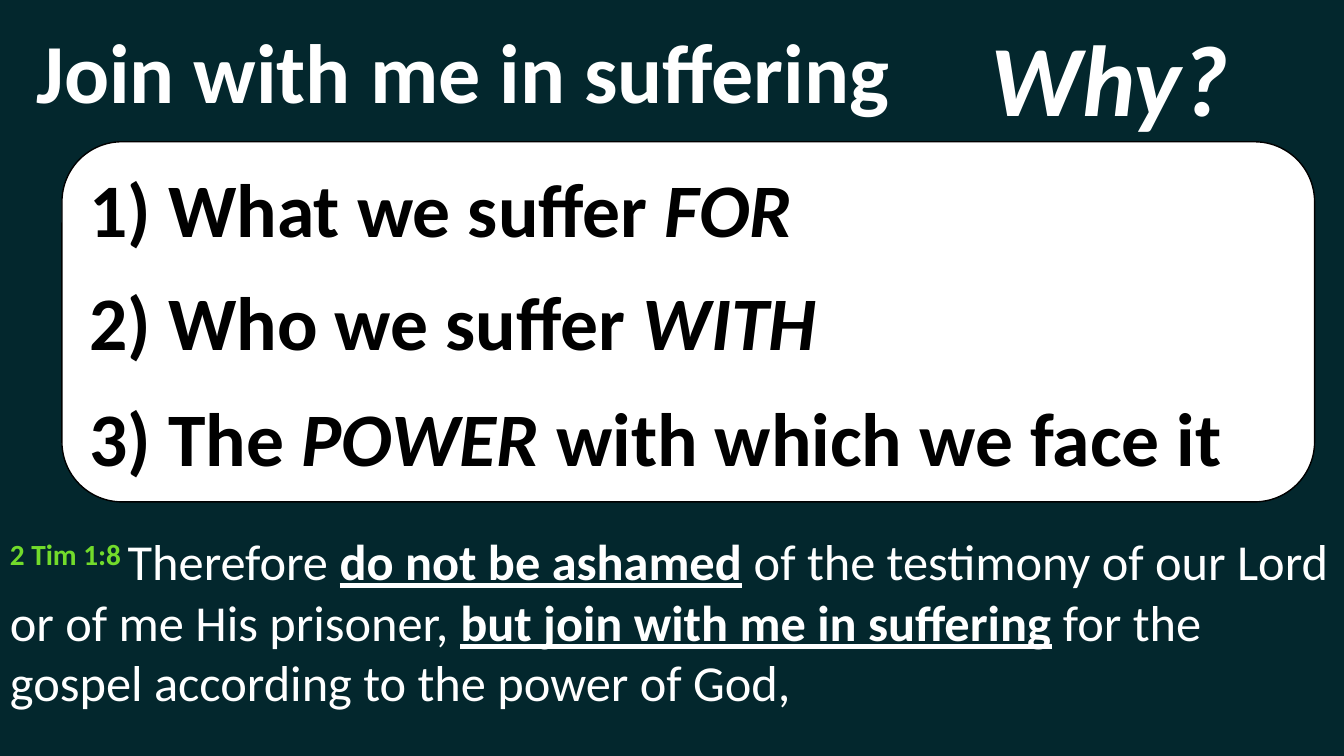
from lxml.etree import SubElement
from pptx import Presentation
from pptx.dml.color import RGBColor as RGB
from pptx.enum.shapes import MSO_SHAPE as SHAPE
from pptx.enum.text import MSO_ANCHOR as ANCHOR, MSO_AUTO_SIZE as AUTO, PP_ALIGN as ALIGN
from pptx.oxml.ns import qn
from pptx.util import Pt

PX = 9525
COLORS = {"dark": "03272D", "white": "FFFFFF", "black": "000000", "green": "72DB2B"}
BOLD = {"bold": True}
ITALIC = {"bold": True, "italic": True}
STRESS = {"bold": True, "underline": True}


class Deck:
    font = "Calibri"

    def __init__(self, width, height):
        self.prs = Presentation()
        self.prs.slide_width, self.prs.slide_height = width * PX, height * PX

    def add_slide(self, color):
        self.s = self.prs.slides.add_slide(self.prs.slide_layouts[1])
        self.paint(self.s.background.fill, color)

    def paint(self, fill, color):
        fill.solid()
        fill.fore_color.rgb = RGB.from_string(COLORS[color])

    def place(self, sp, box):
        for name, px in zip(("left", "top", "width", "height"), box):
            setattr(sp, name, px * PX)

    def frame(self, sp, **formats):
        tf = sp.text_frame
        values = {"word_wrap": True, "auto_size": AUTO.NONE,
                  "vertical_anchor": ANCHOR.MIDDLE, **formats}
        for name, value in values.items():
            setattr(tf, name, value)
        return tf

    def add_runs(self, p, runs, size, color, align=ALIGN.LEFT):
        p.alignment = align
        for text, formats in runs:
            r = p.add_run()
            r.text = text
            values = {"name": self.font, "size": Pt(size), "bold": False, **formats}
            tint = values.pop("color", color)
            baseline = values.pop("baseline", None)
            for name, value in values.items():
                setattr(r.font, name, value)
            r.font.color.rgb = RGB.from_string(COLORS[tint])
            if baseline:
                r._r.get_or_add_rPr().set("baseline", str(baseline))

    def title(self, box, text, size, color):
        sp = self.s.shapes.title
        self.place(sp, box)
        p = self.frame(sp).paragraphs[0]
        self.add_runs(p, [(text, BOLD)], size, color, ALIGN.CENTER)

    def label(self, box, text, size, color):
        sp = self.s.shapes.add_textbox(*(px * PX for px in box))
        p = self.frame(sp).paragraphs[0]
        self.add_runs(p, [(text, ITALIC)], size, color, ALIGN.CENTER)

    def shape(self, kind, box, fill, line=None):
        sp = self.s.shapes.add_shape(kind, *(px * PX for px in box))
        sp.shadow.inherit = False
        self.paint(sp.fill, fill)
        if line:
            self.paint(sp.line.fill, line)
            sp.line.width = Pt(1)
        else:
            sp.line.fill.background()
        return sp

    def passage(self, box, runs, size, color, fill):
        sp = self.shape(SHAPE.RECTANGLE, box, fill)
        self.add_runs(self.frame(sp).paragraphs[0], runs, size, color)

    def numbered(self, box, items, size, color, indent):
        sp = self.s.placeholders[1]
        self.place(sp, box)
        self.s.shapes._spTree.append(sp._element)
        tf = self.frame(sp, margin_left=0, margin_right=0)
        for i, (gap, runs) in enumerate(items):
            p = tf.add_paragraph() if i else tf.paragraphs[0]
            pPr = p._p.get_or_add_pPr()
            pPr.set("marL", str(indent * PX))
            pPr.set("indent", str(-indent * PX))
            SubElement(pPr, qn("a:buFont"), typeface="+mj-lt")
            SubElement(pPr, qn("a:buAutoNum"), type="arabicParenR")
            p.space_before = Pt(gap)
            self.add_runs(p, runs, size, color)


def main():
    deck = Deck(1280, 720)
    deck.add_slide("dark")
    deck.title((9, 13, 864, 107), "Join with me in suffering", 60, "white")
    deck.passage((0, 463, 1280, 257), [
        ("2 Tim 1:8 ", {"bold": True, "color": "green", "baseline": 30000}),
        ("Therefore ", {}),
        ("do not be ashamed", STRESS),
        (" of the testimony of our Lord or of me His prisoner, ", {}),
        ("but join with me in suffering", STRESS),
        (" for the gospel according to the power of God,", {}),
    ], 36, "white", "dark")
    deck.label((900, 10, 335, 126), "Why? ", 72, "white")
    deck.shape(SHAPE.ROUNDED_RECTANGLE, (59, 135, 1193, 343), "white", "black")
    deck.numbered((85, 135, 1141, 343), [
        (0, [(" What we suffer ", BOLD), ("FOR", ITALIC)]),
        (16, [(" Who we suffer ", BOLD), ("WITH", ITALIC)]),
        (18, [(" The ", BOLD), ("POWER", ITALIC), (" with which we face it", BOLD)]),
    ], 54, "black", 36)
    deck.prs.save("out.pptx")


if __name__ == "__main__":
    main()
